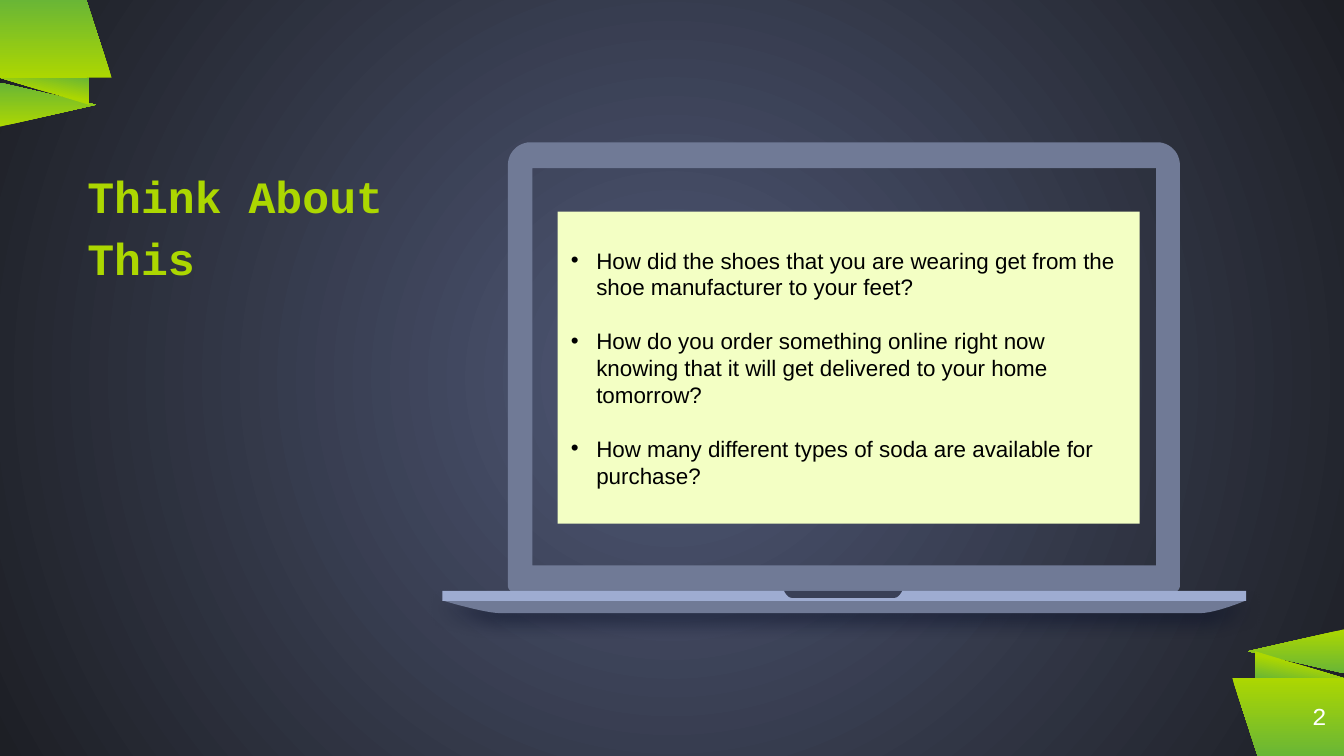
from lxml import etree
from pptx import Presentation
from pptx.dml.color import RGBColor
from pptx.enum.shapes import MSO_SHAPE
from pptx.enum.text import MSO_ANCHOR, PP_ALIGN
from pptx.oxml.ns import qn
from pptx.util import Cm, Pt

RECT, TRIANGLE = MSO_SHAPE.RECTANGLE, MSO_SHAPE.ISOSCELES_TRIANGLE
RIGHT_TRIANGLE = MSO_SHAPE.RIGHT_TRIANGLE
LEFT, RIGHT, MIDDLE = PP_ALIGN.LEFT, PP_ALIGN.RIGHT, MSO_ANCHOR.MIDDLE

SLIDE_W, SLIDE_H = 25.4, 14.29
COLORS = {
    "bg_center": "4F5876", "bg_edge": "1D1F25",
    "lime": "ACD701", "green": "69B636",
    "frame": "707A96", "deck": "9EACD1", "notch": "394057",
    "shadow": "091029", "note": "F3FFC4",
    "black": "000000", "white": "FFFFFF",
}
QUESTIONS = [
    "How did the shoes that you are wearing get from the shoe manufacturer to your feet?",
    "How do you order something online right now knowing that it will get delivered to your home tomorrow?",
    "How many different types of soda are available for purchase?",
]
# Top-left ribbon: kind, left, top, width, height, rotation, angle, first stop
RIBBON = [
    (TRIANGLE, 0.49, 1.07, 0.83, 1.82, 90, 180, 0),
    (RIGHT_TRIANGLE, 0, 1.47, 1.68, 0.51, 180, 260, 0.47),
    (RECT, 0, 0, 1.65, 1.47, 0, 90, 0),
    (RIGHT_TRIANGLE, 1.63, 0, 0.48, 1.47, 0, 90, 0),
]


def rgb(name):
    return RGBColor.from_string(COLORS[name])


def set_gradient(fill, first, last, start=0):
    fill.gradient()
    for stop, name, position in zip(fill.gradient_stops, (first, last), (start, 1)):
        stop.color.rgb = rgb(name)
        stop.position = position


def set_background(s):
    set_gradient(s.background.fill, "bg_center", "bg_edge")
    # Turn the linear gradient into a radial one
    lin = next(s._element.iter(qn("a:lin")))
    path = etree.Element(qn("a:path"), path="circle")
    etree.SubElement(path, qn("a:fillToRect"), l="50000", t="50000", r="50000", b="50000")
    lin.getparent().replace(lin, path)


def add_block(s, kind, x, y, w, h, color=None):
    sp = s.shapes.add_shape(kind, Cm(x), Cm(y), Cm(w), Cm(h))
    sp.shadow.inherit = False
    sp.line.fill.background()
    if color:
        sp.fill.solid()
        sp.fill.fore_color.rgb = rgb(color)
    return sp


def add_ribbon(s, opposite=False):
    """Draw the corner ribbon, or its half-turn at the opposite corner."""
    for kind, x, y, w, h, rotation, angle, start in RIBBON:
        if opposite:
            x, y, rotation = SLIDE_W - x - w, SLIDE_H - y - h, (rotation + 180) % 360
        sp = add_block(s, kind, x, y, w, h)
        sp.rotation = rotation
        set_gradient(sp.fill, "lime", "green", start)
        sp.fill.gradient_angle = angle


def curve(p0, p1, p2, p3, steps=12):
    """Points along a cubic Bezier curve."""
    points = []
    for i in range(steps + 1):
        t = i / steps
        u = 1 - t
        points.append(tuple(u**3 * a + 3 * u * u * t * b + 3 * u * t * t * c + t**3 * d
                            for a, b, c, d in zip(p0, p1, p2, p3)))
    return points


def corner(start, vertex, end):
    """Rounded corner from start to end around a vertex."""
    def toward(p):
        return tuple(a + 0.55 * (b - a) for a, b in zip(p, vertex))
    return curve(start, toward(start), toward(end), end)


def add_outline(s, color, *contours):
    builder = None
    for contour in contours:
        points = [(Cm(x), Cm(y)) for x, y in contour]
        if builder is None:
            builder = s.shapes.build_freeform(*points[0])
        else:
            builder.move_to(*points[0])
        builder.add_line_segments(points[1:], close=True)
    sp = builder.convert_to_shape()
    sp.shadow.inherit = False
    sp.fill.solid()
    sp.fill.fore_color.rgb = rgb(color)
    sp.line.fill.background()
    return sp


def add_drop_shadow(sp):
    effects = sp._element.spPr.find(qn("a:effectLst"))
    shadow = etree.SubElement(effects, qn("a:outerShdw"), blurRad=str(Pt(10.1)),
                              dist=str(Pt(3.8)), dir="5400000", algn="t", rotWithShape="0")
    color = etree.SubElement(shadow, qn("a:srgbClr"), val=COLORS["shadow"])
    etree.SubElement(color, qn("a:alpha"), val="70000")


def add_laptop(s):
    # Screen frame with an opening
    l, t, r, b = 9.6, 2.69, 22.3, 11.2
    big, small = 0.43, 0.13
    frame = (corner((l, t + big), (l, t), (l + big, t))
             + corner((r - big, t), (r, t), (r, t + big))
             + corner((r, b - small), (r, b), (r - small, b))
             + corner((l + small, b), (l, b), (l, b - small)))
    opening = [(10.06, 3.18), (10.06, 10.69), (21.85, 10.69), (21.85, 3.18)]
    add_outline(s, "frame", frame, opening)

    # Base, deck and notch
    l, r, t, b = 8.36, 23.55, 11.35, 11.59
    base = (curve((l, t), (l, t), (9.15, b), (9.45, b))
            + curve((22.68, b), (22.99, b), (r, t), (r, t)))
    add_drop_shadow(add_outline(s, "frame", base))
    add_block(s, RECT, l, 11.17, r - l, 0.19, "deck")
    l, r, t, b = 14.82, 17.05, 11.17, 11.3
    notch = (curve((l, t), (l, t), (14.88, b), (14.96, b))
             + curve((16.91, b), (16.99, b), (r, t), (r, t)))
    add_outline(s, "notch", notch)


def add_textbox(s, x, y, w, h, bottom=0):
    tf = s.shapes.add_textbox(Cm(x), Cm(y), Cm(w), Cm(h)).text_frame
    tf.word_wrap = True
    tf.vertical_anchor = MIDDLE
    tf.margin_left = tf.margin_right = tf.margin_top = 0
    tf.margin_bottom = Cm(bottom)
    return tf


def write(tf, text, size, color, font="Courier New", bold=False, align=LEFT,
          spacing=None, before=0, bullet=False):
    p = tf.paragraphs[0] if not tf.text else tf.add_paragraph()
    if bullet:
        pPr = p._p.get_or_add_pPr()
        pPr.set("marL", str(Cm(0.48)))
        pPr.set("indent", str(Cm(-0.48)))
        etree.SubElement(pPr, qn("a:buFont"), typeface="Arial")
        etree.SubElement(pPr, qn("a:buChar"), char="•")
    p.alignment = align
    if spacing:
        p.line_spacing = Pt(spacing)
    if before:
        p.space_before = Pt(before)
    r = p.add_run()
    r.text = text
    r.font.size, r.font.name, r.font.bold = Pt(size), font, bold
    r.font.color.rgb = rgb(color)


def main():
    prs = Presentation()
    prs.slide_width, prs.slide_height = Cm(SLIDE_W), Cm(SLIDE_H)
    s = prs.slides.add_slide(prs.slide_layouts[6])
    set_background(s)

    # Corner ribbons and page number
    add_ribbon(s, opposite=True)
    add_ribbon(s)
    write(add_textbox(s, 23.72, 12.8, 1.35, 1.47), "2", 13, "white", align=RIGHT)

    add_laptop(s)

    # Title
    tf = add_textbox(s, 1.65, 1.04, 6.71, 7.01, bottom=0.69)
    write(tf, "Think About This", 24, "lime", bold=True, spacing=33.2)

    # Questions on the screen
    tf = add_block(s, RECT, 10.54, 4, 11, 5.9, "note").text_frame
    tf.word_wrap = True
    tf.vertical_anchor = MIDDLE
    for i, question in enumerate(QUESTIONS):
        write(tf, question, 12, "black", font="Arial", spacing=14.4,
              before=14.4 if i else 0, bullet=True)

    prs.save("out.pptx")


if __name__ == "__main__":
    main()
